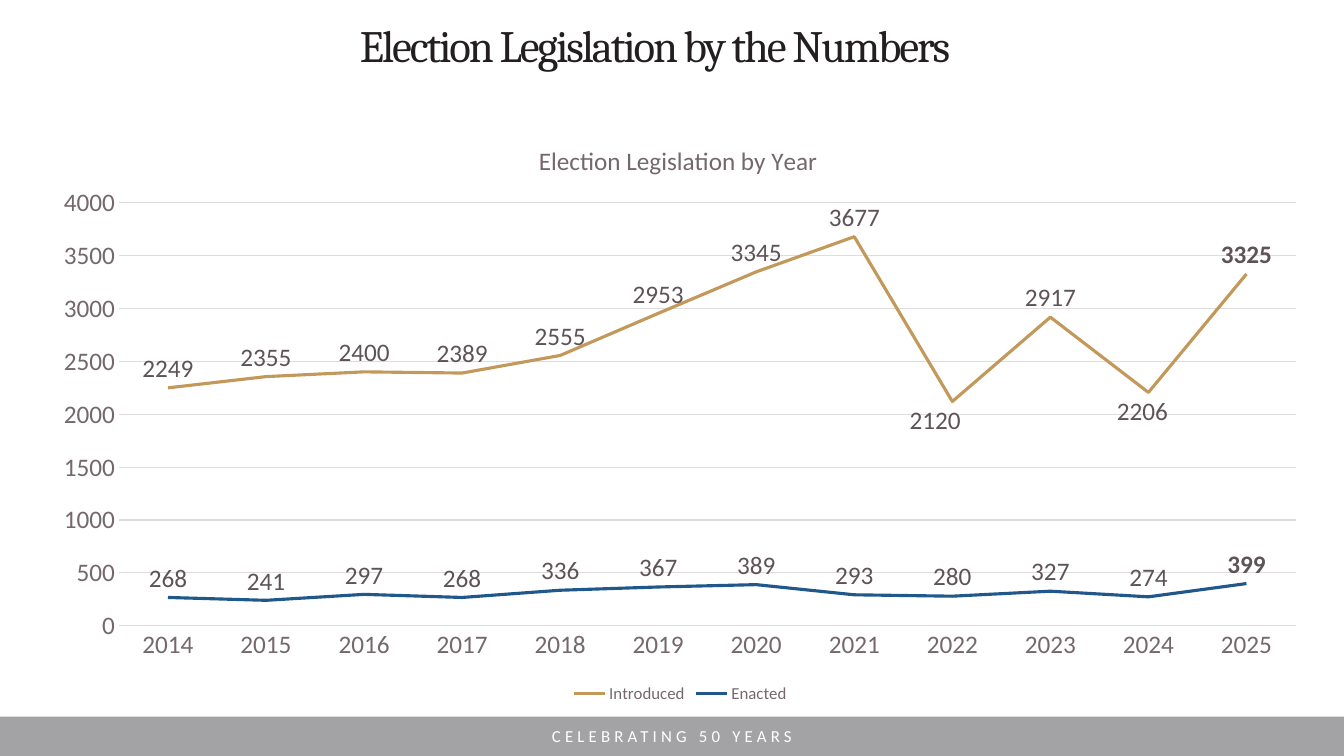
from lxml import etree
from pptx import Presentation
from pptx.chart.data import CategoryChartData
from pptx.dml.color import RGBColor
from pptx.enum.chart import (XL_CHART_TYPE, XL_LABEL_POSITION,
                             XL_LEGEND_POSITION, XL_TICK_MARK)
from pptx.enum.shapes import MSO_SHAPE
from pptx.enum.text import MSO_ANCHOR, PP_ALIGN
from pptx.oxml.ns import qn
from pptx.util import Inches, Pt

ABOVE, BELOW = XL_LABEL_POSITION.ABOVE, XL_LABEL_POSITION.BELOW
NO_TICK = XL_TICK_MARK.NONE
LINE_CHART = XL_CHART_TYPE.LINE
LEGEND_BOTTOM = XL_LEGEND_POSITION.BOTTOM
RECTANGLE = MSO_SHAPE.RECTANGLE
BOTTOM, TOP = MSO_ANCHOR.BOTTOM, MSO_ANCHOR.TOP
LEFT, CENTER = PP_ALIGN.LEFT, PP_ALIGN.CENTER

INK = RGBColor(0x23, 0x1F, 0x20)
AXIS_TEXT = RGBColor(0x75, 0x68, 0x6B)
LABEL_TEXT = RGBColor(0x5E, 0x53, 0x56)
GRID = RGBColor(0xE0, 0xDC, 0xDD)
GOLD = RGBColor(0xC2, 0x99, 0x5B)
BLUE = RGBColor(0x20, 0x58, 0x8C)
GRAY = RGBColor(0xA3, 0xA3, 0xA6)
WHITE = RGBColor(0xFF, 0xFF, 0xFF)

# Content
TITLE = "Election Legislation by the Numbers"
FOOTER = "CELEBRATING 50 YEARS"
CHART_TITLE = "Election Legislation by Year"
YEARS = [str(year) for year in range(2014, 2026)]
SERIES = [
    ("Introduced", GOLD, [2249, 2355, 2400, 2389, 2555, 2953,
                          3345, 3677, 2120, 2917, 2206, 3325]),
    ("Enacted", BLUE, [268, 241, 297, 268, 336, 367,
                       389, 293, 280, 327, 274, 399]),
]
LOW_LABELS = {"2022": -0.17, "2024": -0.06}  # sideways shift in inches

# Geometry in inches: left, top, width, height
SLIDE_WIDTH, SLIDE_HEIGHT = 13.33, 7.5
FOOTER_HEIGHT = 0.39
FOOTER_BAR = (0, SLIDE_HEIGHT - FOOTER_HEIGHT, SLIDE_WIDTH, FOOTER_HEIGHT)
FOOTER_BOX = (3.99, 7.15, 5.35, 0.3)
TITLE_BOX = (3.57, 0.25, 6.19, 0.47)
CHART_BOX = (0.38, 1.15, 12.73, 5.87)
PLOT_BOX = (1.18, 2.01, 11.67, 4.2)
CHART_TITLE_AT = (5.3, 1.38)


def place(box):
    return [Inches(length) for length in box]


def style(font, size, color, name="Calibri", bold=False):
    font.size, font.name, font.bold = Pt(size), name, bold
    font.color.rgb = color


def add_text(slide, box, text, size, color, name, spacing, align, anchor, inset):
    text_frame = slide.shapes.add_textbox(*place(box)).text_frame
    text_frame.word_wrap = True
    text_frame.vertical_anchor = anchor
    text_frame.margin_left = text_frame.margin_right = Inches(inset)
    text_frame.margin_top = text_frame.margin_bottom = Inches(inset / 2)
    text_frame.text = text
    paragraph = text_frame.paragraphs[0]
    paragraph.alignment = align
    run = paragraph.runs[0]
    style(run.font, size, color, name)
    run.font._element.set("spc", str(int(spacing * 100)))
    return paragraph


def set_layout(element, index, **settings):
    """Give a chart part a manual layout, in shares of the chart."""
    for old in element.findall(qn("c:layout")):
        element.remove(old)
    layout = etree.Element(qn("c:layout"))
    manual = etree.SubElement(layout, qn("c:manualLayout"))
    for tag, value in settings.items():
        etree.SubElement(manual, qn("c:" + tag)).set("val", str(value))
    element.insert(index, layout)


def chart_share(left, top):
    return {"xMode": "edge", "yMode": "edge",
            "x": (left - CHART_BOX[0]) / CHART_BOX[2],
            "y": (top - CHART_BOX[1]) / CHART_BOX[3]}


def add_line_chart(slide):
    data = CategoryChartData()
    data.categories = YEARS
    for name, _, values in SERIES:
        data.add_series(name, values)
    chart = slide.shapes.add_chart(LINE_CHART, *place(CHART_BOX), data).chart
    style(chart.font, 10, INK)

    # Title, legend and plot area
    chart.has_title = True
    title = chart.chart_title
    title.text_frame.text = CHART_TITLE
    style(title.text_frame.paragraphs[0].runs[0].font, 18, AXIS_TEXT)
    set_layout(title._element, 1, **chart_share(*CHART_TITLE_AT))
    chart.has_legend = True
    chart.legend.position = LEGEND_BOTTOM
    chart.legend.include_in_layout = False
    style(chart.legend.font, 12, AXIS_TEXT)
    left, top, width, height = PLOT_BOX
    set_layout(chart.element.find(".//" + qn("c:plotArea")), 0,
               layoutTarget="inner", **chart_share(left, top),
               w=width / CHART_BOX[2], h=height / CHART_BOX[3])

    # Axes
    for axis in (chart.category_axis, chart.value_axis):
        axis.major_tick_mark = axis.minor_tick_mark = NO_TICK
        style(axis.tick_labels.font, 18, AXIS_TEXT)
    value_axis = chart.value_axis
    value_axis.minimum_scale, value_axis.maximum_scale = 0, 4000
    value_axis.major_unit = 500
    value_axis.has_major_gridlines = True
    value_axis.format.line.fill.background()
    for line in (chart.category_axis.format.line,
                 value_axis.major_gridlines.format.line):
        line.color.rgb = GRID
        line.width = Pt(0.75)

    # Series and their labels
    plot = chart.plots[0]
    plot.vary_by_categories = False
    for series, (_, color, _) in zip(plot.series, SERIES):
        series.smooth = False
        series.format.line.color.rgb = color
        series.format.line.width = Pt(2.25)
        labels = series.data_labels
        labels.show_value = True
        labels.position = ABOVE
        style(labels.font, 18, LABEL_TEXT)
        last_label = series.points[len(YEARS) - 1].data_label
        style(last_label.font, 18, LABEL_TEXT, bold=True)
        last_label.position = ABOVE

    introduced = plot.series[0]
    for year, shift in LOW_LABELS.items():
        index = YEARS.index(year)
        label = introduced.points[index].data_label
        style(label.font, 18, LABEL_TEXT)
        label.position = BELOW
        for element in introduced._element.iter(qn("c:dLbl")):
            if element.find(qn("c:idx")).get("val") == str(index):
                set_layout(element, 1, x=shift / CHART_BOX[2], y=0)


def main():
    presentation = Presentation()
    presentation.slide_width = Inches(SLIDE_WIDTH)
    presentation.slide_height = Inches(SLIDE_HEIGHT)
    slide = presentation.slides.add_slide(presentation.slide_layouts[6])

    # Footer band
    bar = slide.shapes.add_shape(RECTANGLE, *place(FOOTER_BAR))
    bar.shadow.inherit = False
    bar.fill.solid()
    bar.fill.fore_color.rgb = GRAY
    bar.line.fill.background()
    add_text(slide, FOOTER_BOX, FOOTER, 12, WHITE, "Calibri", 3, CENTER, TOP, 0.1)

    # Headline and chart
    headline = add_text(slide, TITLE_BOX, TITLE, 32, INK, "Cambria", -1.5,
                        LEFT, BOTTOM, 0)
    headline.line_spacing = 0.9
    add_line_chart(slide)
    presentation.save("out.pptx")


if __name__ == "__main__":
    main()
